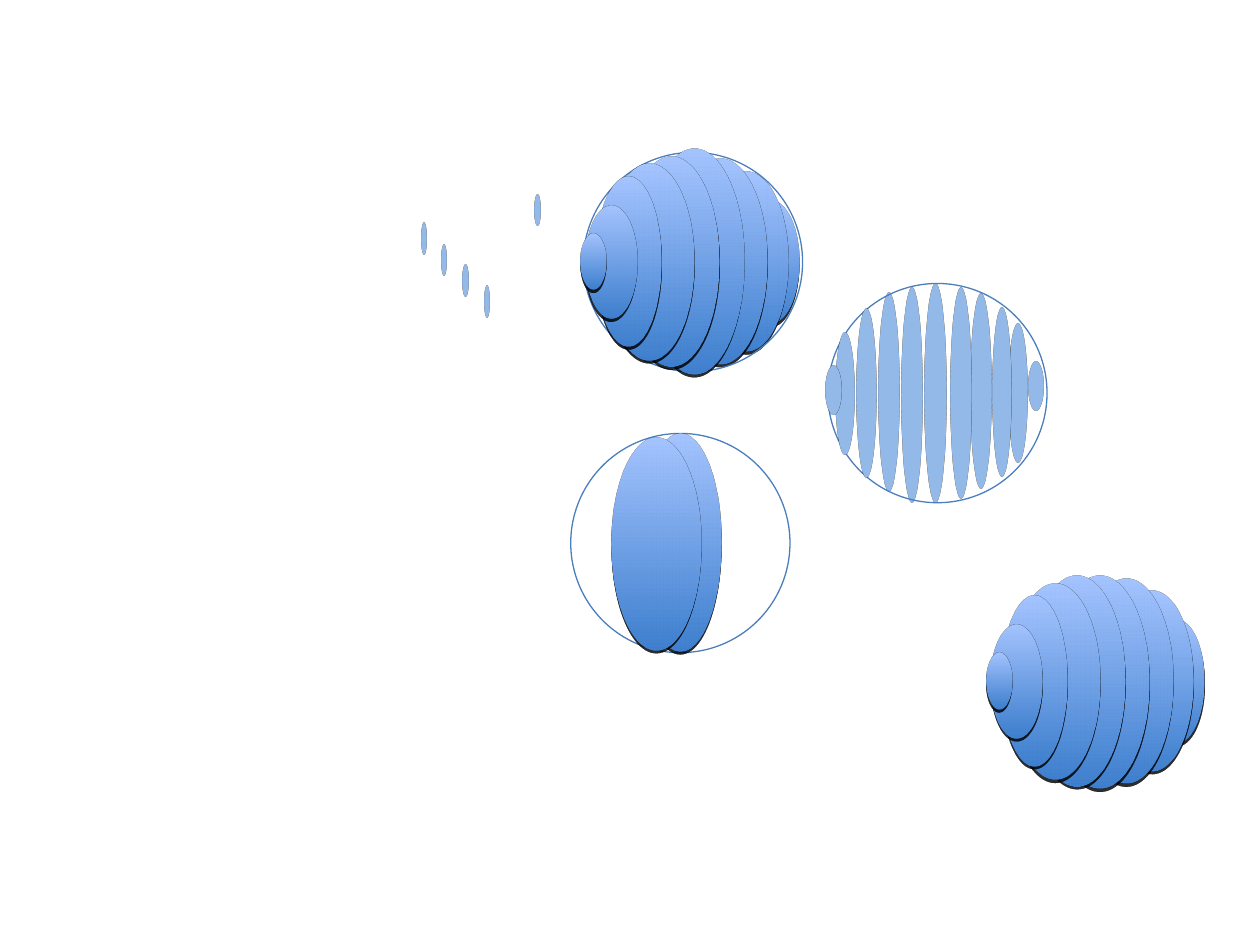
"""Build a slide of balls made from turned discs."""
from lxml import etree
from pptx import Presentation
from pptx.dml.color import RGBColor
from pptx.enum.shapes import MSO_SHAPE
from pptx.oxml import parse_xml
from pptx.util import Inches, Pt

OVAL = MSO_SHAPE.OVAL
DRAWING = "http://schemas.openxmlformats.org/drawingml/2006/main"
LINE, PALE, DARK, LIGHT = "4B7EBC", "8EB4E3", "3F80CE", "A4C4FF"
SHADOW = (f'<a:outerShdw xmlns:a="{DRAWING}" blurRad="40000" dist="23000" dir="5400000" '
          'rotWithShape="0"><a:srgbClr val="000000"><a:alpha val="35000"/>'
          '</a:srgbClr></a:outerShdw>')


def color(value):
    return RGBColor.from_string(value)


def add_disc(parent, left, top, width, height, kind="outline", turn=0):
    disc = parent.add_shape(OVAL, Inches(left), Inches(top), Inches(width), Inches(height))
    disc.shadow.inherit = False
    disc.line.color.rgb = color(LINE)
    disc.line.width = Pt(0.75)
    if kind == "outline":
        disc.fill.background()
    elif kind == "pale":
        disc.fill.solid()
        disc.fill.fore_color.rgb = color(PALE)
    else:
        disc.fill.gradient()
        disc.fill.gradient_angle = 90
        for stop, shade, position in zip(disc.fill.gradient_stops, (DARK, LIGHT), (0, 1)):
            stop.color.rgb = color(shade)
            stop.position = position
        effects = disc._element.spPr.find(f"{{{DRAWING}}}effectLst")
        effects.append(parse_xml(SHADOW))
    if turn:
        scene = etree.SubElement(disc._element.spPr, f"{{{DRAWING}}}scene3d")
        camera = etree.SubElement(scene, f"{{{DRAWING}}}camera", prst="orthographicFront")
        etree.SubElement(camera, f"{{{DRAWING}}}rot", lat="0", lon=str(turn * 60000), rev="0")
        etree.SubElement(scene, f"{{{DRAWING}}}lightRig", rig="threePt", dir="t")


deck = Presentation()
deck.slide_width, deck.slide_height = Inches(10), Inches(7.5)
page = deck.slides.add_slide(deck.slide_layouts[6])
shapes = page.shapes

glossy = {"kind": "glossy", "turn": 55}
pale = {"kind": "pale", "turn": 80}
ball_size = 1.74

right_discs = [(5.73, 1.59, 0.78, 0.98), (5.35, 1.36, 1.15, 1.43), (5.07, 1.26, 1.3, 1.63)]
left_discs = [(4.66, 1.24, 1.34, 1.67), (4.53, 1.3, 1.25, 1.56), (4.53, 1.4, 0.92, 1.35)]
end_discs = [(4.49, 1.63, 0.72, 0.9), (4.53, 1.85, 0.36, 0.45)]

for disc in right_discs:
    add_disc(shapes, *disc, **glossy)

for left, top in [(4.14, 1.54), (3.24, 1.77), (3.4, 1.94), (3.57, 2.1), (3.74, 2.27)]:
    add_disc(shapes, left, top, 0.25, 0.25, **pale)

striped_ball = shapes.add_group_shape().shapes
right_stripes = [
    (7.88, 2.87, 0.69, 0.39), (7.65, 2.57, 0.86, 1.1), (7.52, 2.44, 0.87, 1.34),
    (7.31, 2.33, 0.96, 1.55), (7.15, 2.28, 0.96, 1.68), (6.93, 2.25, 0.99, 1.74),
    (6.76, 2.28, 0.96, 1.71), (6.58, 2.32, 0.96, 1.58),
]
left_stripes = [(6.42, 2.45, 0.92, 1.34), (6.28, 2.64, 0.86, 0.97), (6.27, 2.9, 0.69, 0.39)]
for stripe in right_stripes:
    add_disc(striped_ball, *stripe, **pale)
add_disc(striped_ball, 6.57, 2.25, ball_size, ball_size)
for stripe in left_stripes:
    add_disc(striped_ball, *stripe, **pale)

add_disc(shapes, 4.63, 1.21, ball_size, ball_size)
for disc in [(4.82, 1.18, 1.38, 1.79)] + left_discs:
    add_disc(shapes, *disc, **glossy)

add_disc(shapes, 4.53, 3.44, ball_size, ball_size)
for disc in [(4.83, 3.44, 1.14, 1.73), (4.59, 3.47, 1.24, 1.69)] + end_discs:
    add_disc(shapes, *disc, **glossy)

lower_ball = shapes.add_group_shape().shapes
for left, top, width, height in right_discs + [(4.82, 1.24, 1.38, 1.69)] + left_discs + end_discs:
    add_disc(lower_ball, left + 3.22, top + 3.33, width, height, **glossy)

deck.save("out.pptx")
